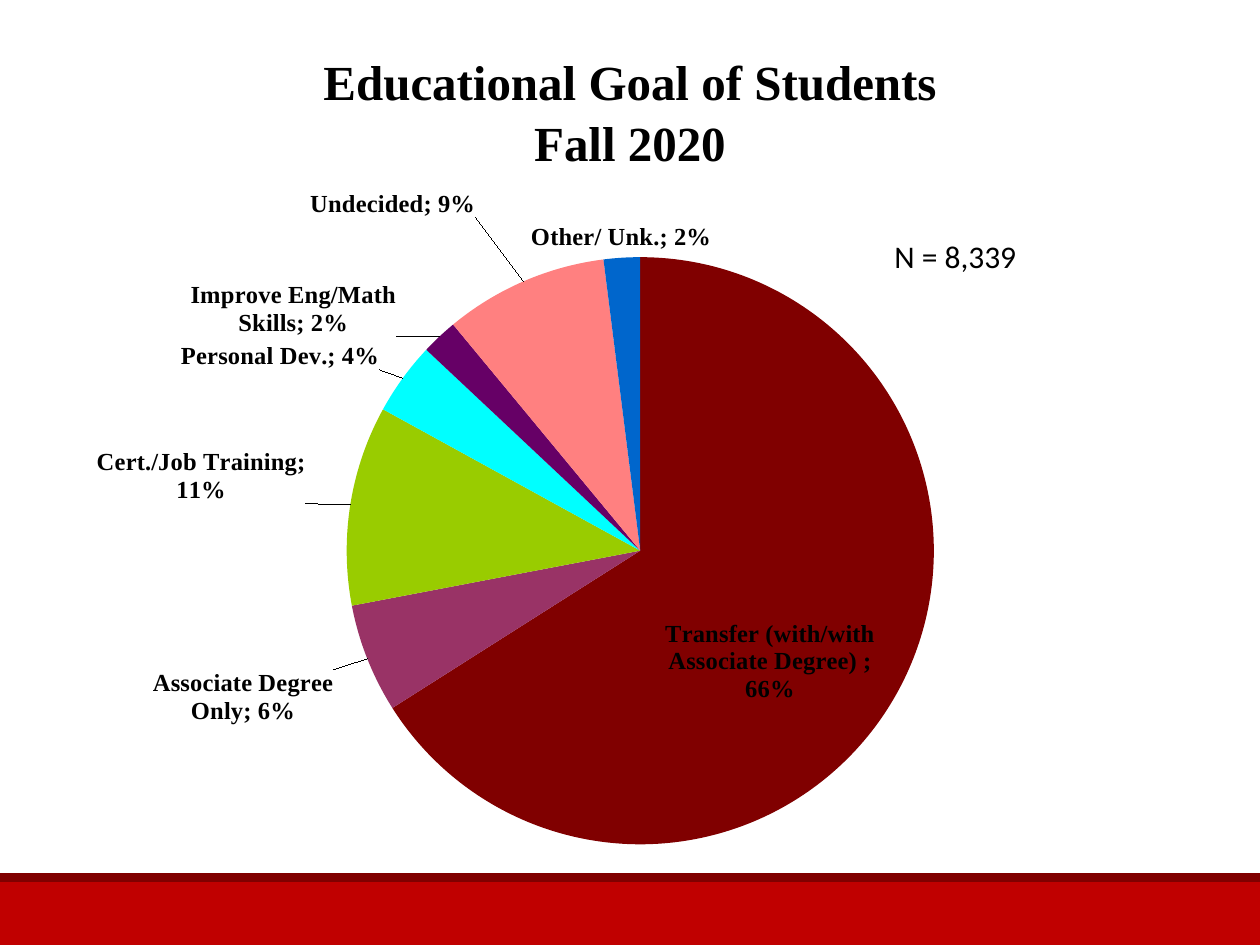
from lxml.etree import SubElement
from pptx import Presentation
from pptx.chart.data import CategoryChartData
from pptx.dml.color import RGBColor
from pptx.enum.chart import XL_CHART_TYPE as Chart, XL_LABEL_POSITION as Pos
from pptx.enum.shapes import MSO_SHAPE as Shape
from pptx.enum.text import MSO_ANCHOR as Anchor, PP_ALIGN as Align
from pptx.oxml.ns import qn
from pptx.util import Emu, Pt

SCALE = 914400 / 126
SERIF = "Times New Roman"
CHART_BOX = (58, 154, 1143, 717)
GOALS = [
    ("Transfer (with/with Associate Degree) ", 0.66, "800000", Pos.INSIDE_END, (-16, 14)),
    ("Associate Degree Only", 0.06, "993366", Pos.OUTSIDE_END, (-27, 8)),
    ("Cert./Job Training", 0.11, "99CC00", Pos.OUTSIDE_END, (-37, 0)),
    ("Personal Dev.", 0.04, "00FFFF", Pos.OUTSIDE_END, (-17, -4)),
    ("Improve Eng/Math Skills", 0.02, "660066", Pos.OUTSIDE_END, (-38, 5)),
    ("Undecided", 0.09, "FF8080", Pos.OUTSIDE_END, (-45, -57)),
    ("Other/ Unk.", 0.02, "0066CC", Pos.OUTSIDE_END, (0, 0)),
]


def px(n):
    return Emu(round(n * SCALE))


def rgb(value):
    return RGBColor.from_string(value)


def set_layout(parent, values):
    layout = parent.find(qn("c:layout"))
    if layout is None:
        layout = SubElement(parent, qn("c:layout"))
    manual = SubElement(layout, qn("c:manualLayout"))
    for name, value in values.items():
        SubElement(manual, qn(f"c:{name}")).set("val", str(value))
    return layout


class Deck:
    def __init__(self, width, height):
        self.prs = Presentation()
        self.prs.slide_width, self.prs.slide_height = px(width), px(height)
        self.s = self.prs.slides.add_slide(self.prs.slide_layouts[5])

    def style(self, font, size, name=SERIF, bold=False):
        for key, value in {"size": Pt(size), "name": name, "bold": bold}.items():
            setattr(font, key, value)
        font.color.rgb = rgb("000000")

    def bar(self, box, color):
        sp = self.s.shapes.add_shape(Shape.RECTANGLE, *map(px, box))
        sp.shadow.inherit = False
        sp.fill.solid()
        sp.fill.fore_color.rgb = rgb(color)
        sp.line.fill.background()

    def title(self, box, lines):
        sp = self.s.shapes.title
        sp.left, sp.top, sp.width, sp.height = map(px, box)
        tf = sp.text_frame
        tf.vertical_anchor = Anchor.MIDDLE
        tf.text = "\n".join(lines)
        for p in tf.paragraphs:
            p.alignment, p.line_spacing = Align.CENTER, 1.05
            self.style(p.runs[0].font, 28, bold=True)

    def text(self, box, words):
        tf = self.s.shapes.add_textbox(*map(px, box)).text_frame
        tf.word_wrap = True
        r = tf.paragraphs[0].add_run()
        r.text = words
        self.style(r.font, 18, "Calibri")

    def pie(self, box, goals):
        data = CategoryChartData(number_format="0%")
        data.categories = [goal[0] for goal in goals]
        data.add_series("Series 1", [goal[1] for goal in goals])
        chart = self.s.shapes.add_chart(Chart.PIE, *map(px, box), data).chart
        chart.has_title = chart.has_legend = False
        self.style(chart.font, 11.7)
        plot = chart.plots[0]
        plot.vary_by_categories = True
        set_layout(chart._chartSpace.chart.plotArea, {
            "layoutTarget": "inner", "xMode": "edge", "yMode": "edge",
            "x": 0.246, "y": 0.144, "w": 0.527, "h": 0.819})
        series = plot.series[0]
        labels = series.data_labels
        labels.show_value = labels.show_category_name = True
        labels.number_format, labels.number_format_is_linked = "0%", False
        self.style(labels.font, 14, bold=True)
        for i, (_, _, color, position, offset) in enumerate(goals):
            point = series.points[i]
            point.format.fill.solid()
            point.format.fill.fore_color.rgb = rgb(color)
            self.label(point.data_label, position, offset, box)

    def label(self, label, position, offset, box):
        self.style(label.font, 14, bold=True)
        label.position = position
        node = label._dLbl
        node.find(qn("c:showCatName")).set("val", "1")
        node.find(f"{qn('c:txPr')}/{qn('a:bodyPr')}").set("wrap", "square")
        SubElement(node, qn("c:separator")).text = "; "
        if any(offset):
            layout = set_layout(node, {
                "x": round(offset[0] / box[2], 4), "y": round(offset[1] / box[3], 4)})
            node.insert(1, layout)


def main():
    deck = Deck(1260, 945)
    deck.bar((0, 882, 1260, 63), "C00000")
    deck.bar((0, 873, 1260, 9), "800000")
    deck.title((63, 31, 1134, 158), ["Educational Goal of Students", "Fall 2020"])
    deck.pie(CHART_BOX, GOALS)
    deck.text((882, 231, 151, 50), "N = 8,339")
    deck.prs.save("out.pptx")


if __name__ == "__main__":
    main()
